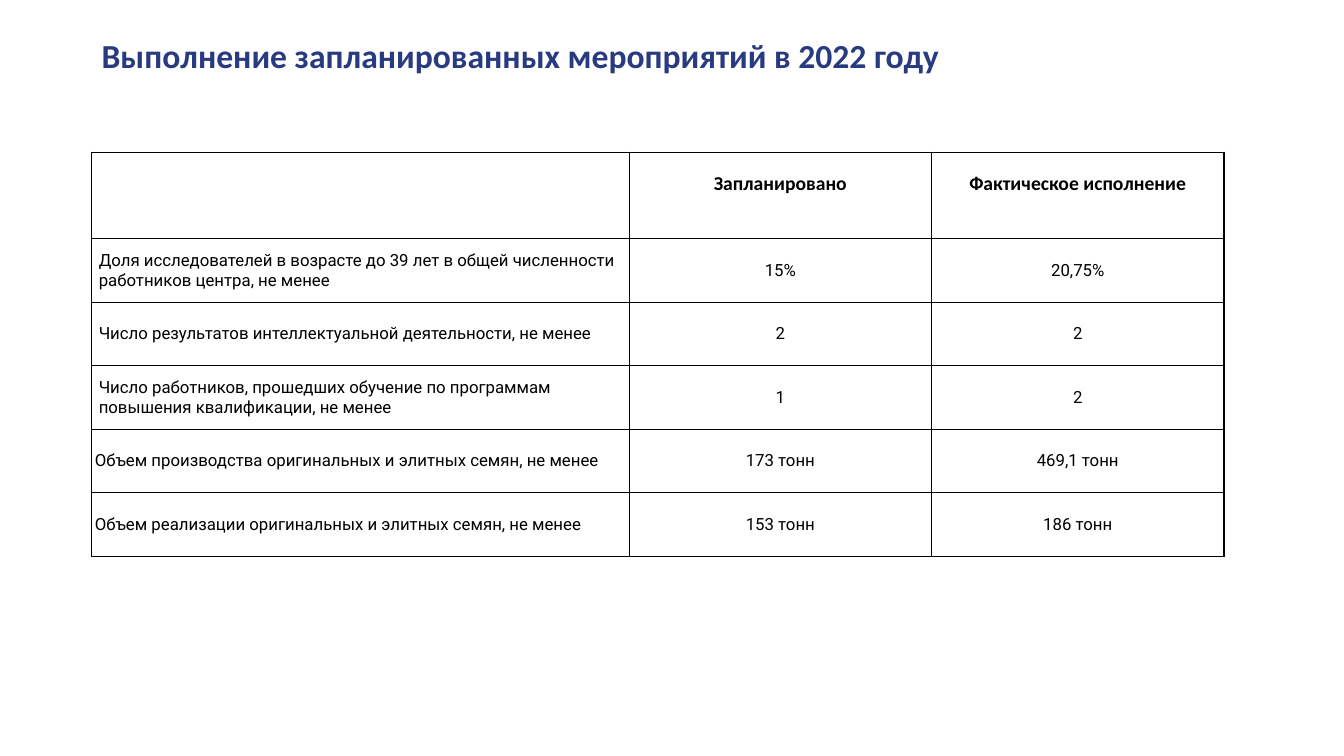
from lxml import etree
from pptx import Presentation
from pptx import util as u
from pptx.dml import color
from pptx.enum import text
from pptx.oxml import ns

PX = 9144
BLACK = "000000"
NAVY = "283B81"
COLUMN_WIDTHS = [533, 300, 290]
HEADER_HEIGHT = 86
HEADINGS = ["", "Запланировано", "Фактическое исполнение"]
INDICATORS = [
    ("Доля исследователей в возрасте до 39 лет в общей численности работников центра, не менее",
     "15%", "20,75%", 7),
    ("Число результатов интеллектуальной деятельности, не менее", "2", "2", 7),
    ("Число работников, прошедших обучение по программам повышения квалификации, не менее",
     "1", "2", 7),
    ("Объем производства оригинальных и элитных семян, не менее", "173 тонн", "469,1 тонн", 3),
    ("Объем реализации оригинальных и элитных семян, не менее", "153 тонн", "186 тонн", 3),
]


def px(length):
    return u.Emu(length * PX)


def rgb(value):
    return color.RGBColor.from_string(value)


def set_font(paragraph, name, size, shade, bold=False):
    font = paragraph.font
    font.name = name
    font.size = u.Pt(size)
    font.bold = bold
    font.color.rgb = rgb(shade)


def add_borders(cell):
    properties = cell._tc.get_or_add_tcPr()
    for side in ("lnL", "lnR", "lnT", "lnB"):
        line = etree.SubElement(properties, ns.qn(f"a:{side}"), w=str(u.Pt(1)))
        fill = etree.SubElement(line, ns.qn("a:solidFill"))
        etree.SubElement(fill, ns.qn("a:srgbClr"), val=BLACK)


def fill_cell(cell, wording, font_name, size, bold, alignment, margins):
    add_borders(cell)
    cell.fill.background()
    cell.vertical_anchor = text.MSO_ANCHOR.MIDDLE
    cell.margin_left, cell.margin_top, cell.margin_right, cell.margin_bottom = map(px, margins)
    cell.text = wording
    paragraph = cell.text_frame.paragraphs[0]
    paragraph.alignment = alignment
    set_font(paragraph, font_name, size, BLACK, bold)


def add_title(slide, left, top, width, height):
    title = slide.shapes.add_textbox(px(left), px(top), px(width), px(height))
    frame = title.text_frame
    frame.word_wrap = True
    frame.text = "Выполнение запланированных мероприятий в 2022 году"
    set_font(frame.paragraphs[0], "Calibri", 24, NAVY, True)


def add_results(slide, left, top, width, height):
    results = slide.shapes.add_table(
        len(INDICATORS) + 1, len(HEADINGS), px(left), px(top), px(width), px(height)).table
    results.first_row = False
    results.horz_banding = False
    for column, column_width in zip(results.columns, COLUMN_WIDTHS):
        column.width = px(column_width)
    indicator_height = round((height - HEADER_HEIGHT) / len(INDICATORS))
    for index, row in enumerate(results.rows):
        row.height = px(indicator_height if index else HEADER_HEIGHT)

    center, start = text.PP_ALIGN.CENTER, text.PP_ALIGN.LEFT
    for column, heading in enumerate(HEADINGS):
        fill_cell(results.cell(0, column), heading, "Calibri", 14, True, center, (10, 5, 10, 28))
    for row, (indicator, planned, actual, inset) in enumerate(INDICATORS, 1):
        for column, wording in enumerate((indicator, planned, actual)):
            side = 7 if column else inset
            fill_cell(results.cell(row, column), wording, "Roboto", 12, False,
                      center if column else start, (side, 0, side, 0))


def main():
    deck = Presentation()
    deck.slide_width = px(1333)
    deck.slide_height = px(750)
    slide = deck.slides.add_slide(deck.slide_layouts[6])
    add_title(slide, 91, 30, 1150, 87)
    add_results(slide, 91, 151, sum(COLUMN_WIDTHS), 400)
    deck.save("out.pptx")


if __name__ == "__main__":
    main()
